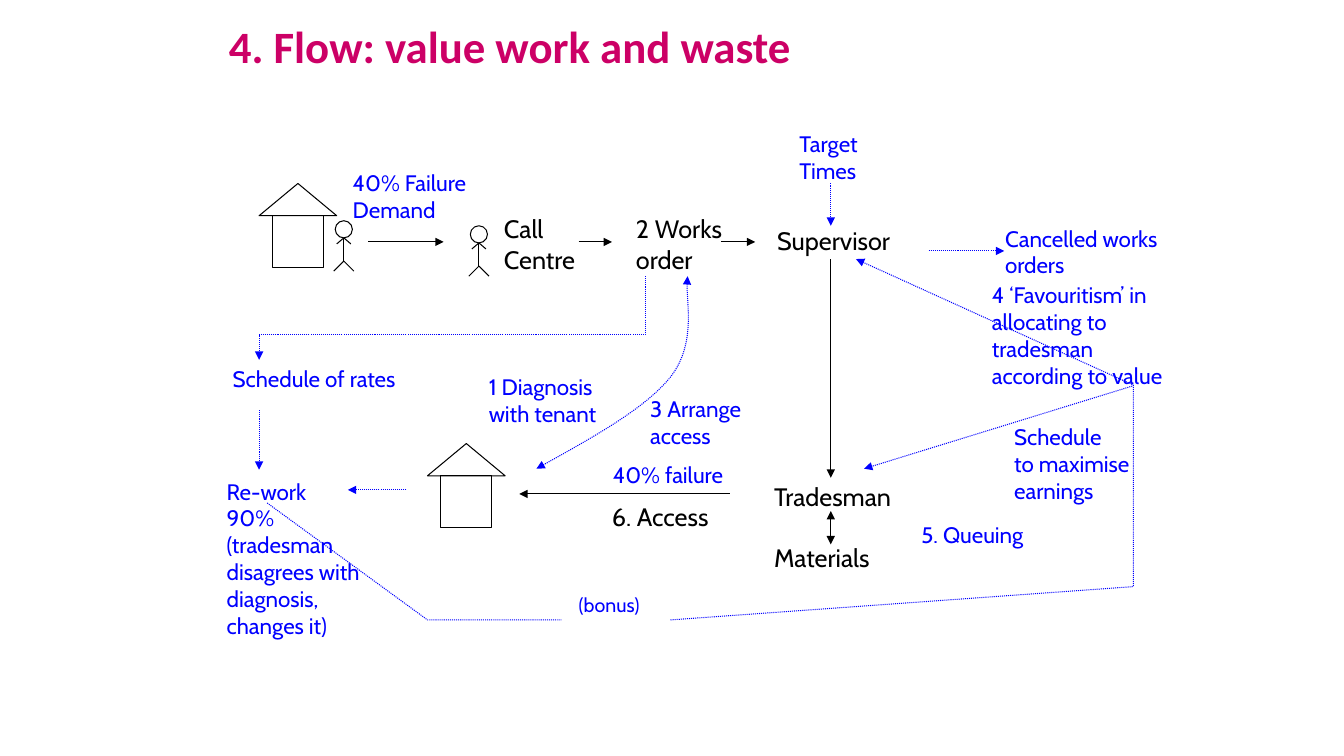
from pptx import Presentation
from pptx.dml.color import RGBColor
from pptx.enum.dml import MSO_LINE
from pptx.enum.shapes import MSO_CONNECTOR, MSO_SHAPE as Preset
from pptx.enum.text import MSO_ANCHOR, MSO_AUTO_SIZE, PP_ALIGN
from pptx.oxml.ns import qn
from pptx.util import Inches, Pt
from lxml.etree import SubElement

BLACK, BLUE, PINK, WHITE = "000000", "0000FF", "CC0066", "FFFFFF"


def colour(hex_value):
    return RGBColor.from_string(hex_value)


def style_line(line, hue, ends="", dotted=False):
    line.width = Pt(0.75)
    line.color.rgb = colour(hue)
    if dotted:
        line.dash_style = MSO_LINE.ROUND_DOT
    for end in ("head", "tail"):
        if end in ends:
            SubElement(line._ln, qn(f"a:{end}End"), type="triangle")


def style_text(paragraph, font_name, size, hue, bold=False):
    for run in paragraph.runs:
        run.font.name = font_name
        run.font.size = Pt(size)
        run.font.bold = bold
        run.font.color.rgb = colour(hue)


def add_line(shapes, start, end, hue=BLACK, ends=""):
    line = shapes.add_connector(
        MSO_CONNECTOR.STRAIGHT, *[Inches(v) for v in (*start, *end)])
    SubElement(line._element.spPr, qn("a:effectLst"))
    style_line(line.line, hue, ends, dotted=hue == BLUE)


def add_outline(shapes, preset, left, top, width, height):
    outline = shapes.add_shape(
        preset, *[Inches(v) for v in (left, top, width, height)])
    outline.shadow.inherit = False
    outline.fill.background()
    style_line(outline.line, BLACK)


def add_house(slide, left, top):
    house = slide.shapes.add_group_shape().shapes
    add_outline(house, Preset.RECTANGLE, left + 0.13, top + 0.32, 0.51, 0.51)
    add_outline(house, Preset.ISOSCELES_TRIANGLE, left, top, 0.77, 0.32)


def add_person(slide, middle, top):
    person = slide.shapes.add_group_shape().shapes
    neck, hip = (middle, top + 0.17), (middle, top + 0.4)
    add_outline(person, Preset.OVAL, middle - 0.085, top, 0.17, 0.17)
    add_line(person, neck, hip)
    for side in (-1, 1):
        add_line(person, neck, (middle + side * 0.07, top + 0.23))
        add_line(person, hip, (middle + side * 0.1, top + 0.5))


def add_label(slide, text, left, top, width, height,
              hue=BLUE, size=16, wrap=False, gap=0):
    label = slide.shapes.add_textbox(
        *[Inches(v) for v in (left, top, width, height)])
    frame = label.text_frame
    frame.text = text
    frame.word_wrap = wrap
    frame.auto_size = MSO_AUTO_SIZE.SHAPE_TO_FIT_TEXT
    for paragraph in frame.paragraphs:
        style_text(paragraph, "Cabin", size, hue)
    for paragraph in frame.paragraphs[1:]:
        paragraph.space_before = Pt(gap)
    return label


def add_route(slide, points, ends="", curved=False):
    start, *others = [(Inches(x), Inches(y)) for x, y in points]
    builder = slide.shapes.build_freeform(*start)
    builder.add_line_segments(others, close=False)
    route = builder.convert_to_shape()
    route.shadow.inherit = False
    route.fill.background()
    style_line(route.line, BLUE, ends, dotted=True)
    if curved:
        outline = next(route._element.iter(qn("a:path")))
        segments = outline.findall(qn("a:lnTo"))
        for first in range(0, len(segments), 3):
            curve = SubElement(outline, qn("a:cubicBezTo"))
            for segment in segments[first:first + 3]:
                curve.append(segment[0])
                outline.remove(segment)


def add_title(slide, text):
    title = slide.shapes.title
    title.left, title.top = Inches(2.17), Inches(0.13)
    title.width, title.height = Inches(9), Inches(0.71)
    title.text_frame.text = text
    title.text_frame.vertical_anchor = MSO_ANCHOR.MIDDLE
    heading = title.text_frame.paragraphs[0]
    heading.alignment = PP_ALIGN.LEFT
    heading.line_spacing = 0.9
    style_text(heading, "Calibri", 32, PINK, bold=True)


def add_value_work(slide):
    add_house(slide, 2.57, 1.82)
    add_house(slide, 4.24, 4.4)
    add_person(slide, 3.41, 2.19)
    add_person(slide, 4.75, 2.24)
    for text, *box in (
            ("Call\nCentre", 4.9, 2.07, 0.93, 0.71),
            ("2 Works\norder", 6.21, 2.07, 1.1, 0.71),
            ("Supervisor", 7.61, 2.19, 1.37, 0.4),
            ("6. Access", 5.97, 4.92, 1.24, 0.4)):
        add_label(slide, text, *box, hue=BLACK, size=18)
    add_label(slide, "Tradesman\nMaterials", 7.58, 4.73, 1.42, 1.01,
              hue=BLACK, size=18, gap=21.6)
    for start, end in (
            ((3.65, 2.4), (4.4, 2.4)),
            ((5.74, 2.4), (6.07, 2.4)),
            ((7.15, 2.4), (7.49, 2.4)),
            ((8.24, 2.57), (8.24, 4.74)),
            ((7.24, 4.9), (5.15, 4.9))):
        add_line(slide.shapes, start, end, ends="tail")
    add_line(slide.shapes, (8.24, 5.07), (8.24, 5.4), ends="head tail")


def add_waste(slide):
    cancelled = add_label(slide, "Cancelled works\norders", 9.87, 2.18, 1.8, 0.64)
    style_line(cancelled.line, WHITE)
    for text, *box in (
            ("40% Failure\nDemand", 3.4, 1.63, 1.38, 0.64),
            ("1 Diagnosis\nwith tenant", 4.75, 3.65, 1.34, 0.64),
            ("3 Arrange\naccess", 6.35, 3.87, 1.17, 0.64),
            ("Target\nTimes", 7.83, 1.24, 0.82, 0.64),
            ("5. Queuing", 9.04, 5.12, 1.29, 0.37),
            ("40% failure", 5.98, 4.53, 1.34, 0.37),
            ("Schedule of rates", 2.21, 3.57, 1.91, 0.37)):
        add_label(slide, text, *box)
    add_label(slide, "(bonus)", 5.64, 5.83, 0.88, 0.34, size=14)
    for text, *box in (
            ("Re-work\n90%\n(tradesman disagrees with diagnosis, changes it)",
             2.15, 4.69, 1.59, 1.99),
            ("4 ‘Favouritism’ in allocating to tradesman\naccording to value",
             9.74, 2.74, 1.93, 1.72),
            ("Schedule\nto maximise earnings", 9.96, 4.15, 1.48, 0.91)):
        add_label(slide, text, *box, wrap=True)
    for start, end in (
            ((9.21, 2.49), (9.96, 2.49)),
            ((8.24, 1.82), (8.24, 2.24)),
            ((11.23, 3.83), (8.57, 4.65)),
            ((2.57, 4.07), (2.57, 4.66)),
            ((4.03, 4.86), (3.45, 4.86))):
        add_line(slide.shapes, start, end, hue=BLUE, ends="tail")
    add_route(slide, [(5.32, 4.65), (5.86, 4.35), (6.4, 4.05), (6.65, 3.74),
                      (6.9, 3.42), (6.79, 2.9), (6.82, 2.74)],
              ends="head tail", curved=True)
    add_route(slide, [(6.4, 2.74), (6.4, 3.32), (2.57, 3.32), (2.57, 3.57)],
              ends="tail")
    add_route(slide, [(6.65, 6.15), (11.24, 5.82), (11.24, 3.82), (8.49, 2.57)],
              ends="tail")
    add_route(slide, [(2.65, 4.99), (4.24, 6.15), (5.57, 6.15)])


def main():
    deck = Presentation()
    deck.slide_width, deck.slide_height = Inches(13.33), Inches(7.5)
    slide = deck.slides.add_slide(deck.slide_layouts[5])
    add_title(slide, "4. Flow: value work and waste")
    add_value_work(slide)
    add_waste(slide)
    deck.save("out.pptx")


if __name__ == "__main__":
    main()
